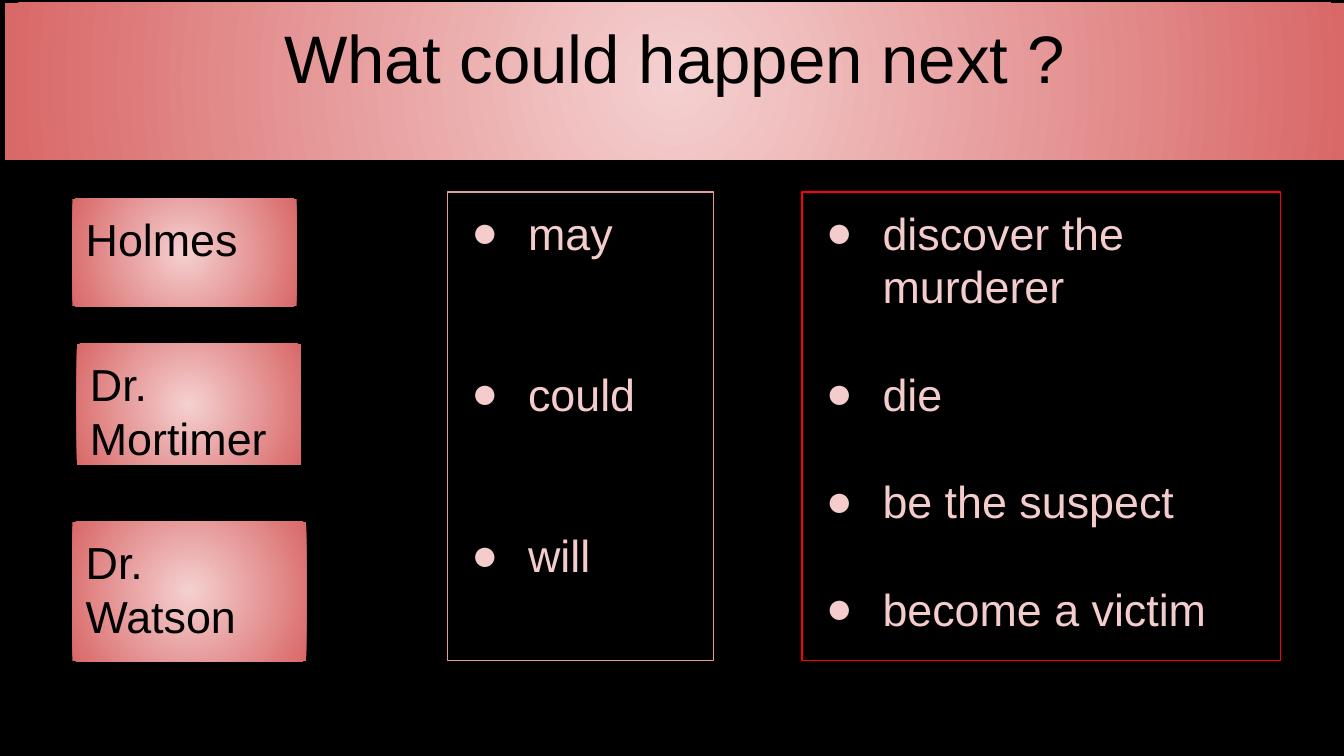
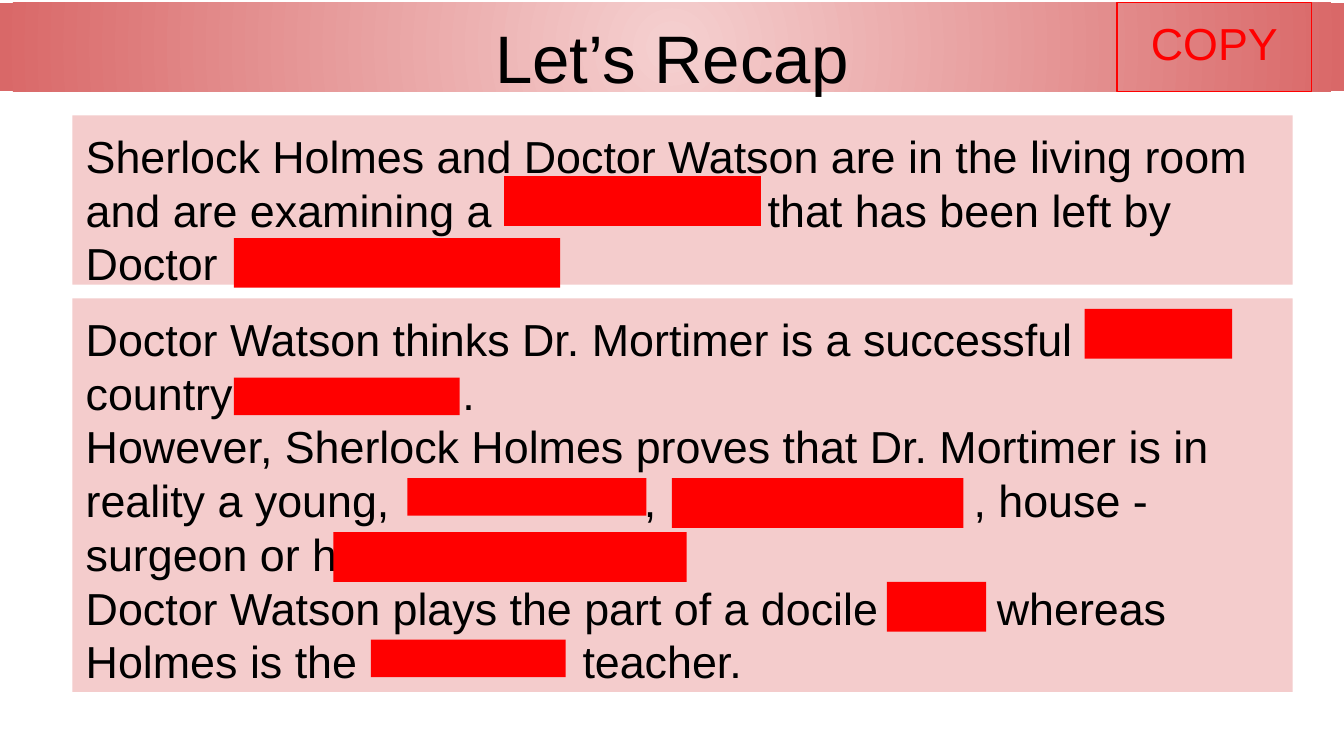
import lxml.etree
import pptx
import pptx.dml.color
import pptx.enum.shapes
import pptx.enum.text
import pptx.oxml.ns
import pptx.util

Cm = pptx.util.Cm
Pt = pptx.util.Pt
qn = pptx.oxml.ns.qn
RGB = pptx.dml.color.RGBColor.from_string

COLOURS = {
    "black": "000000",
    "white": "FFFFFF",
    "glow": "F5D0D0",
    "rose": "D96868",
    "pale": "F4CCCC",
    "salmon": "EA9999",
    "red": "FF0000",
}
FONT = "Arial"
TITLE_SIZE = 36
BODY_SIZE = 24
BLANK_LINE = 28.8  # points, one empty line of body text


def add_box(page, place, lines=(), fill=None, line=None, ink="black",
            size=BODY_SIZE, centred=False):
    """Add a rectangle; fill is a colour name, "radial" or None."""
    box = page.shapes.add_shape(
        pptx.enum.shapes.MSO_SHAPE.RECTANGLE, *[Cm(length) for length in place])
    box.shadow.inherit = False
    if fill == "radial":
        box.fill.gradient()
        for stop, name, position in zip(box.fill.gradient_stops, ("glow", "rose"), (0, 1)):
            stop.color.rgb = RGB(COLOURS[name])
            stop.position = position
        gradient = box.element.spPr.find(qn("a:gradFill"))
        gradient.remove(gradient.find(qn("a:lin")))
        circle = lxml.etree.SubElement(gradient, qn("a:path"), path="circle")
        lxml.etree.SubElement(circle, qn("a:fillToRect"),
                              {side: "50000" for side in "ltrb"})
    elif fill:
        box.fill.solid()
        box.fill.fore_color.rgb = RGB(COLOURS[fill])
    else:
        box.fill.background()
    if line:
        box.line.color.rgb = RGB(COLOURS[line])
        box.line.width = Pt(0.75)
    else:
        box.line.fill.background()

    frame = box.text_frame
    frame.word_wrap = True
    frame.vertical_anchor = pptx.enum.text.MSO_ANCHOR.TOP
    frame.margin_left = frame.margin_right = Cm(0.25)
    frame.margin_top = frame.margin_bottom = Cm(0.25)
    frame.text = "\n".join(lines)
    align = pptx.enum.text.PP_ALIGN
    for para in frame.paragraphs:
        para.alignment = align.CENTER if centred else align.LEFT
        for span in para.runs:
            span.font.name = FONT
            span.font.size = Pt(size)
            span.font.color.rgb = RGB(COLOURS[ink])
    return box


def add_bullets(box, gap):
    """Turn the paragraphs into a list with a gap in points between items."""
    for index, para in enumerate(box.text_frame.paragraphs):
        para.space_before = Pt(gap if index else 0)
        props = para._p.get_or_add_pPr()
        props.set("marL", str(Cm(1.27)))
        props.set("indent", str(Cm(-1.07)))
        colour = lxml.etree.SubElement(props, qn("a:buClr"))
        lxml.etree.SubElement(colour, qn("a:srgbClr"), val=COLOURS["pale"])
        lxml.etree.SubElement(props, qn("a:buFont"), typeface=FONT)
        lxml.etree.SubElement(props, qn("a:buChar"), char="●")


deck = pptx.Presentation()
deck.slide_width = Cm(25.4)
deck.slide_height = Cm(14.29)
pages = []
for background in ("black", "white"):
    page = deck.slides.add_slide(deck.slide_layouts[6])
    page.background.fill.solid()
    page.background.fill.fore_color.rgb = RGB(COLOURS[background])
    pages.append(page)
guess_page, recap_page = pages

# Slide 1: build a sentence from a person, a modal and an event
add_box(guess_page, (0.1, 0.05, 25.3, 2.97), ["What could happen next ?"],
        fill="radial", size=TITLE_SIZE, centred=True)

people = [
    ((1.37, 3.76, 4.24, 2.03), ["Holmes"]),
    ((1.45, 6.5, 4.24, 2.29), ["Dr. Mortimer"]),
    ((1.37, 9.86, 4.42, 2.64), ["Dr.", "Watson"]),
]
for place, name in people:
    add_box(guess_page, place, name, fill="radial")

events = ["discover the murderer", "die", "be the suspect", "become a victim"]
modals = ["may", "could", "will"]
columns = [
    (15.16, 9.04, "red", events, BLANK_LINE),
    (8.46, 5.03, "salmon", modals, 2 * BLANK_LINE),
]
for left, width, line, items, gap in columns:
    column = add_box(guess_page, (left, 3.63, width, 8.86), items, line=line, ink="pale")
    add_bullets(column, gap)

# Slide 2: recap text with gaps; each paragraph has the tab stops that end its gaps
recaps = [
    (2.18, 3.2, [
        ("Sherlock Holmes and Doctor Watson are in the living room and are examining "
         "a\tthat has been left by Doctor", [12.89]),
    ]),
    (5.64, 7.44, [
        ("Doctor Watson thinks Dr. Mortimer is a successful\tcountry\t.", [7.12, 21.68]),
        ("However, Sherlock Holmes proves that Dr. Mortimer is in reality a young,"
         "\t,\t, house - surgeon or h", [10.55, 16.78]),
        ("Doctor Watson plays the part of a docile\twhereas Holmes is the\tteacher.",
         [9.39, 17.22]),
    ]),
]
for top, height, passages in recaps:
    recap = add_box(recap_page, (1.37, top, 23.06, height),
                    [text for text, stops in passages], fill="pale")
    for para, (text, stops) in zip(recap.text_frame.paragraphs, passages):
        tabs = lxml.etree.SubElement(para._p.get_or_add_pPr(), qn("a:tabLst"))
        for stop in stops:
            lxml.etree.SubElement(tabs, qn("a:tab"), pos=str(Cm(stop)), algn="l")

add_box(recap_page, (0, 0.05, 25.4, 1.68), ["Let’s Recap"],
        fill="radial", size=TITLE_SIZE, centred=True)
add_box(recap_page, (21.11, 0.05, 3.68, 1.68), ["COPY"],
        line="red", ink="red", centred=True)

TALL, LOW = 0.94, 0.71
gap_covers = [
    (9.53, 3.33, 4.85, TALL),
    (4.42, 4.5, 6.17, TALL),
    (20.5, 5.84, 2.79, TALL),
    (4.42, 7.14, 4.27, LOW),
    (7.7, 9.04, 4.52, LOW),
    (12.7, 9.04, 5.51, TALL),
    (6.3, 10.06, 6.68, TALL),
    (16.76, 11, 1.88, TALL),
    (7.01, 12.09, 3.68, LOW),
]
for place in gap_covers:
    add_box(recap_page, place, fill="red")

deck.save("out.pptx")
